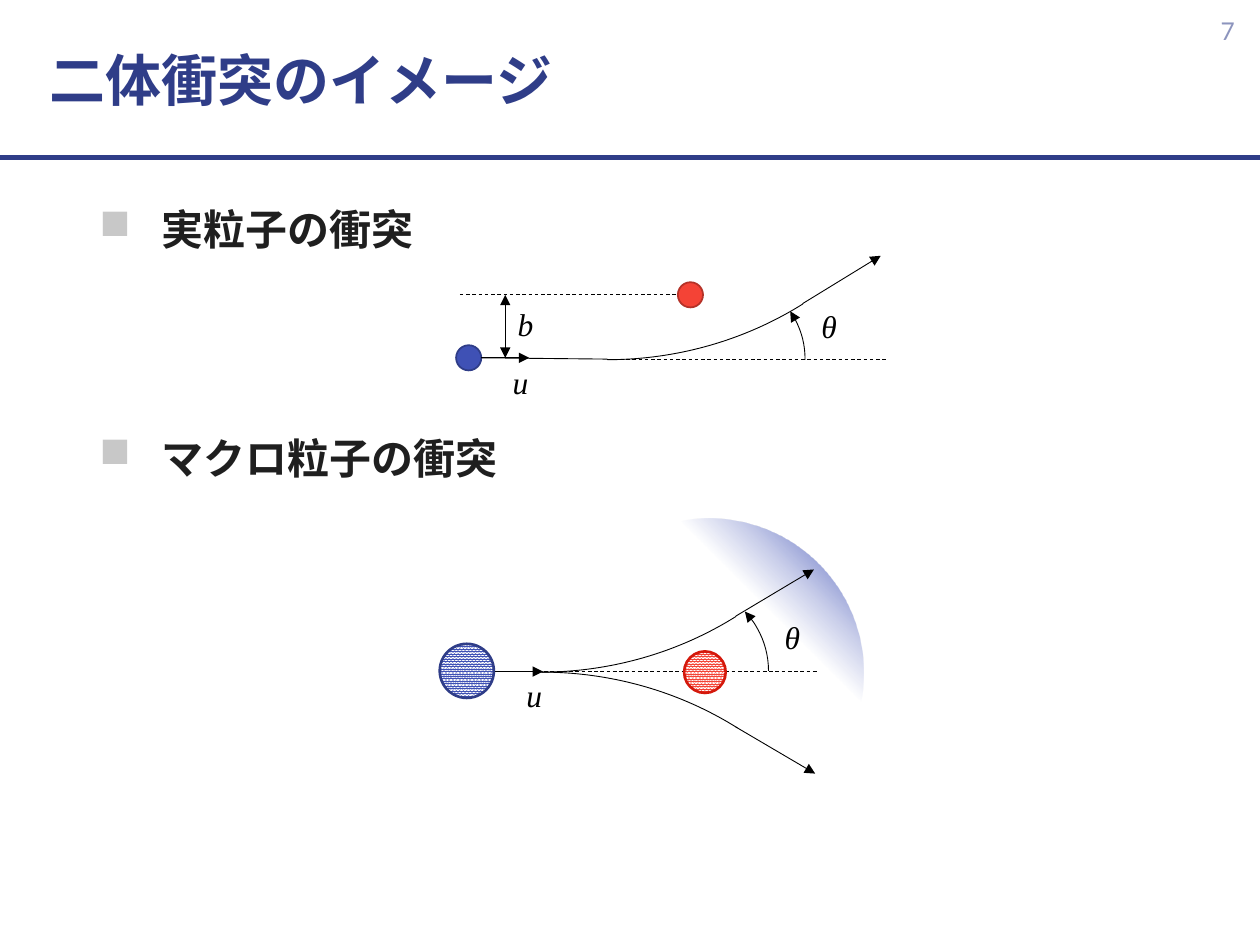
"""Build the slide that illustrates two-body collisions of real and macro particles."""
from dataclasses import dataclass
from typing import Optional

from lxml.etree import SubElement
from pptx import Presentation
from pptx.dml.color import RGBColor
from pptx.enum.dml import MSO_LINE, MSO_PATTERN
from pptx.enum.shapes import MSO_CONNECTOR, MSO_SHAPE
from pptx.enum.text import MSO_ANCHOR, MSO_AUTO_SIZE, PP_ALIGN
from pptx.oxml import parse_xml
from pptx.oxml.ns import nsdecls, qn
from pptx.util import Inches, Pt

NAVY = RGBColor(0x2F, 0x3D, 0x88)
INDIGO = RGBColor(0x3F, 0x51, 0xB5)
RED = RGBColor(0xF4, 0x43, 0x36)
BRICK = RGBColor(0xB5, 0x32, 0x28)
CRIMSON = RGBColor(0xD4, 0x19, 0x0C)
BLACK = RGBColor(0, 0, 0)
WHITE = RGBColor(0xFF, 0xFF, 0xFF)
SILVER = RGBColor(0xC8, 0xC8, 0xC8)
SANS, SERIF = "Lato", "Times New Roman"


@dataclass
class Particle:
    left: float
    top: float
    size: float
    fill: RGBColor
    outline: RGBColor
    weight: float = 1
    patterned: bool = False


@dataclass
class Arc:
    left: float
    top: float
    width: float
    height: float
    start: float
    rotation: float = 0
    flipped: bool = False
    head: bool = False


@dataclass
class Line:
    start: tuple[float, float]
    end: tuple[float, float]
    dashed: bool = False
    head: bool = False
    tail: bool = False
    color: RGBColor = BLACK
    weight: float = 0.5


@dataclass
class Style:
    size: float
    font: str = SANS
    color: RGBColor = NAVY
    bold: bool = False
    italic: bool = False
    opacity: Optional[int] = None


TITLE = Style(32, bold=True)
HEADING = Style(24, color=BLACK, bold=True, opacity=87)
PAGE_NUMBER = Style(14, opacity=54)
SYMBOL = Style(18, SERIF, BLACK, italic=True)


def add_text(slide, text: str, box: tuple, style: Style, inset: Optional[tuple] = None):
    shape = slide.shapes.add_textbox(*map(Inches, box))
    frame = shape.text_frame
    frame.word_wrap = True
    if inset:
        frame.vertical_anchor = MSO_ANCHOR.MIDDLE
        frame.margin_left = frame.margin_right = Inches(inset[0])
        frame.margin_top = frame.margin_bottom = Inches(inset[1])
    run = frame.paragraphs[0].add_run()
    run.text = text
    font = run.font
    font.name, font.size = style.font, Pt(style.size)
    font.bold, font.italic = style.bold, style.italic
    font.color.rgb = style.color
    if style.opacity is not None:
        color = run._r.rPr.find(".//" + qn("a:srgbClr"))
        SubElement(color, qn("a:alpha"), val=str(style.opacity * 1000))
    return frame


def add_heading(slide, text: str, top: float) -> None:
    paragraph = add_text(slide, text, (0.69, top, 8.62, 0.56), HEADING).paragraphs[0]
    paragraph.space_after = Pt(12)
    properties = paragraph._p.get_or_add_pPr()
    properties.set("marL", str(Inches(0.49)))
    properties.set("indent", str(-Inches(0.49)))
    color = SubElement(properties, qn("a:buClr"))
    SubElement(color, qn("a:srgbClr"), val=str(SILVER))
    SubElement(properties, qn("a:buChar"), char="■")


def add_symbol(slide, text: str, left: float, top: float) -> None:
    frame = add_text(slide, text, (left, top, 0.33, 0.4), SYMBOL)
    frame.word_wrap = False
    frame.auto_size = MSO_AUTO_SIZE.SHAPE_TO_FIT_TEXT


def style_line(line, color: RGBColor, weight: float, head: bool = False, tail: bool = False) -> None:
    line.color.rgb = color
    line.width = Pt(weight)
    for tag, wanted in (("a:headEnd", head), ("a:tailEnd", tail)):
        if wanted:
            SubElement(line._get_or_add_ln(), qn(tag), type="triangle")


def add_line(slide, line: Line) -> None:
    connector = slide.shapes.add_connector(
        MSO_CONNECTOR.STRAIGHT, *map(Inches, line.start + line.end))
    if line.dashed:
        connector.line.dash_style = MSO_LINE.DASH
    style_line(connector.line, line.color, line.weight, line.head, line.tail)
    SubElement(connector._element.spPr, qn("a:effectLst"))


def add_particle(slide, particle: Particle) -> None:
    box = (particle.left, particle.top, particle.size, particle.size)
    shape = slide.shapes.add_shape(MSO_SHAPE.OVAL, *map(Inches, box))
    shape.shadow.inherit = False
    if particle.patterned:
        shape.fill.patterned()
        shape.fill.pattern = MSO_PATTERN.PERCENT_90
        shape.fill.fore_color.rgb = particle.fill
        shape.fill.back_color.rgb = WHITE
    else:
        shape.fill.solid()
        shape.fill.fore_color.rgb = particle.fill
    style_line(shape.line, particle.outline, particle.weight)


def add_arc(slide, arc: Arc) -> None:
    box = (arc.left, arc.top, arc.width, arc.height)
    shape = slide.shapes.add_shape(MSO_SHAPE.ARC, *map(Inches, box))
    shape.adjustments[0] = arc.start
    shape.adjustments[1] = 0
    shape.rotation = arc.rotation
    shape.shadow.inherit = False
    shape.fill.background()
    style_line(shape.line, BLACK, 0.5, arc.head)
    if arc.flipped:
        shape._element.spPr.find(qn("a:xfrm")).set("flipV", "1")


def add_scatter_glow(slide, left: float, top: float, size: float) -> None:
    shape = slide.shapes.add_shape(MSO_SHAPE.OVAL, *map(Inches, (left, top, size, size)))
    shape.rotation = 45
    shape.shadow.inherit = False
    shape.line.fill.background()
    stops = "".join(
        f'<a:gs pos="{position}000"><a:srgbClr val="{INDIGO}">'
        f'<a:alpha val="{opacity}000"/></a:srgbClr></a:gs>'
        for position, opacity in ((64, 0), (71, 29), (85, 100)))
    gradient = parse_xml(
        f'<a:gradFill {nsdecls("a")} rotWithShape="0"><a:gsLst>{stops}</a:gsLst>'
        '<a:path path="circle"><a:fillToRect t="100000" r="100000"/></a:path></a:gradFill>')
    shape._element.spPr.find(qn("a:prstGeom")).addnext(gradient)


def draw_real_collision(slide) -> None:
    add_particle(slide, Particle(3.62, 2.74, 0.2, INDIGO, NAVY))
    add_particle(slide, Particle(5.38, 2.24, 0.2, RED, BRICK))
    add_arc(slide, Arc(2.17, -2.6, 5.3, 5.61, 194.94, 90))
    add_arc(slide, Arc(5.02, 2.17, 1.37, 1.37, 195.5, head=True))
    for line in (Line((3.82, 2.84), (4.82, 2.85)),
                 Line((6.37, 2.41), (6.99, 2.03), tail=True),
                 Line((3.82, 2.84), (4.2, 2.84), tail=True),
                 Line((3.65, 2.34), (5.38, 2.34), dashed=True),
                 Line((4.01, 2.34), (4.01, 2.84), head=True, tail=True),
                 Line((4.82, 2.85), (7.05, 2.85), dashed=True)):
        add_line(slide, line)
    for text, left, top in (("u", 3.97, 2.83), ("b", 4.01, 2.37), ("θ", 6.42, 2.39)):
        add_symbol(slide, text, left, top)


def draw_macro_collision(slide) -> None:
    add_scatter_glow(slide, 4.4, 4.12, 2.45)
    add_line(slide, Line((4.27, 5.33), (6.5, 5.33), dashed=True))
    add_particle(slide, Particle(5.43, 5.17, 0.33, RED, CRIMSON, 1.5, True))
    add_particle(slide, Particle(3.49, 5.11, 0.43, INDIGO, NAVY, 1.5, True))
    add_arc(slide, Arc(4.73, 4.64, 1.37, 1.37, 189.94, head=True))
    add_arc(slide, Arc(1.64, -0.12, 5.3, 5.61, 194.94, 90))
    add_arc(slide, Arc(1.65, 5.18, 5.3, 5.61, 194.94, 270, flipped=True))
    for start, end in (((3.93, 5.33), (4.31, 5.33)),
                       ((5.84, 4.89), (6.46, 4.52)),
                       ((5.84, 5.77), (6.47, 6.14))):
        add_line(slide, Line(start, end, tail=True))
    for text, left, top in (("u", 4.08, 5.32), ("θ", 6.13, 4.86)):
        add_symbol(slide, text, left, top)


def main() -> None:
    presentation = Presentation()
    presentation.slide_width, presentation.slide_height = Inches(10), Inches(7.5)
    slide = presentation.slides.add_slide(presentation.slide_layouts[6])
    add_line(slide, Line((0, 1.25), (10, 1.25), color=NAVY, weight=3))
    add_text(slide, "二体衝突のイメージ", (0, 0, 10, 1.25), TITLE, (0.39, 0.2))
    number = add_text(slide, "7", (8.83, 0, 1.17, 0.48), PAGE_NUMBER, (0.2, 0.2))
    number.paragraphs[0].alignment = PP_ALIGN.RIGHT
    add_heading(slide, "実粒子の衝突", 1.57)
    draw_real_collision(slide)
    add_heading(slide, "マクロ粒子の衝突", 3.38)
    draw_macro_collision(slide)
    presentation.save("out.pptx")


if __name__ == "__main__":
    main()
